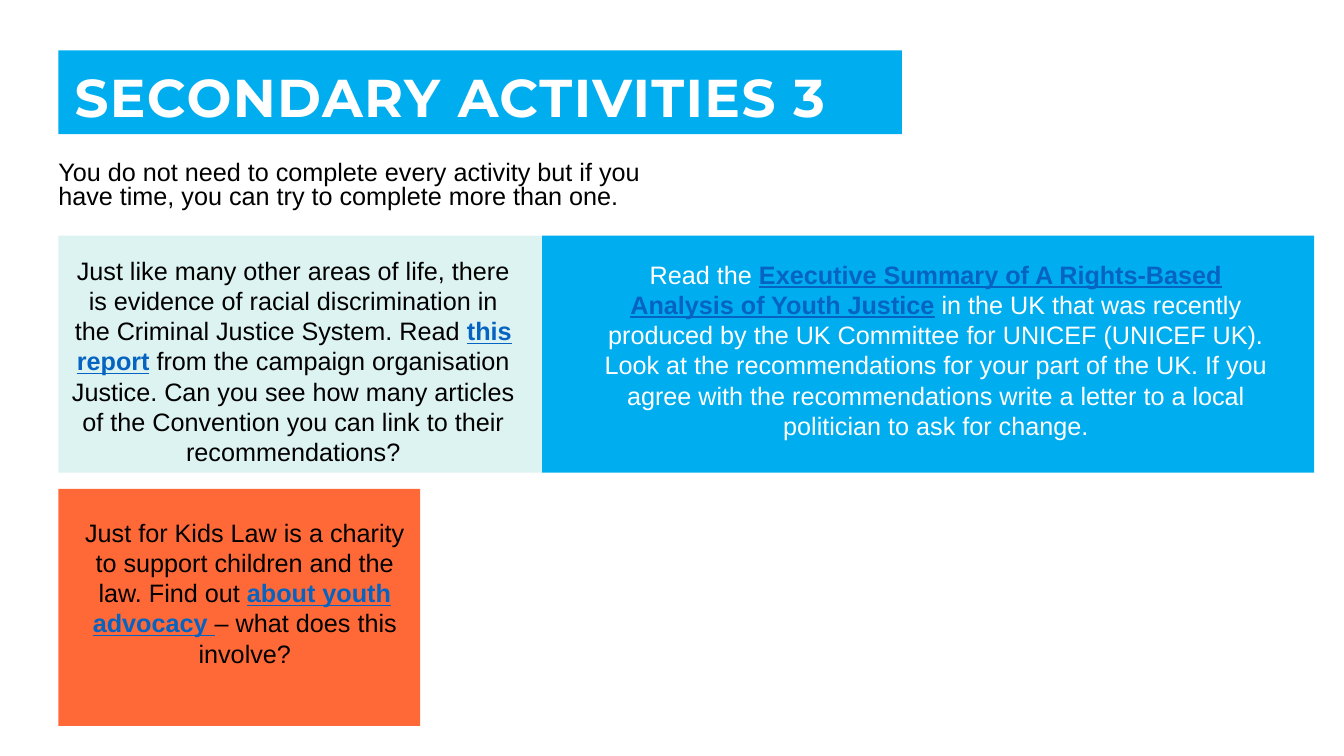
"""Build the "Secondary Activities 3" slide with three activity panels."""
from dataclasses import dataclass

from pptx import Presentation
from pptx import util as u
from pptx.dml.color import RGBColor
from pptx.enum import shapes, text

TITLE = "SECONDARY ACTIVITIES 3"
INTRO = ("You do not need to complete every activity but if you have time, "
         "you can try to complete more than one.")
ACTIVITIES = [
    {"column": 0, "row": 0, "width": 12.19, "fill": "mint", "ink": "black",
     "text_box": (0, 0.36, 11.84, 5.64),
     "words": ("Just like many other areas of life, there is evidence of racial "
               "discrimination in the Criminal Justice System. Read ",
               "this report",
               " from the campaign organisation Justice. Can you see how many "
               "articles of the Convention you can link to their recommendations?")},
    {"column": 0, "row": 1, "width": 9.12, "fill": "orange", "ink": "black",
     "text_box": (0.28, 0.58, 8.84, 4.62),
     "words": ("Just for Kids Law is a charity to support children and the law. "
               "Find out ",
               "about youth advocacy ",
               "– what does this involve?")},
    {"column": 1, "row": 0, "width": 19.46, "fill": "blue", "ink": "white",
     "text_box": (1.3, 0.46, 17.25, 4.88),
     "words": ("Read the ",
               "Executive Summary of A Rights-Based Analysis of Youth Justice",
               " in the UK that was recently produced by the UK Committee for "
               "UNICEF (UNICEF UK). Look at the recommendations for your part of "
               "the UK. If you agree with the recommendations write a letter to a "
               "local politician to ask for change.")},
]


@dataclass(frozen=True)
class Theme:
    blue: str = "00AEEF"
    mint: str = "DDF3F1"
    orange: str = "FF6937"
    link: str = "0563C1"
    black: str = "000000"
    white: str = "FFFFFF"
    title_font: str = "Montserrat"
    body_font: str = "Arial"
    title_size: int = 38
    body_size: int = 18


THEME = Theme()
LEFT, PANEL_TOP, PANEL_HEIGHT, ROW_GAP = 1.47, 5.94, 5.97, 0.41
COLUMNS = (LEFT, LEFT + ACTIVITIES[0]["width"])


def add_panel(page, left, top, width, height, fill):
    panel = page.shapes.add_shape(shapes.MSO_SHAPE.RECTANGLE,
                                  *map(u.Cm, (left, top, width, height)))
    panel.shadow.inherit = False
    panel.fill.solid()
    panel.fill.fore_color.rgb = RGBColor.from_string(fill)
    panel.line.fill.background()
    return panel


def add_text_box(page, left, top, width, height):
    box = page.shapes.add_textbox(*map(u.Cm, (left, top, width, height)))
    box.text_frame.word_wrap = True
    return box


def add_span(para, words, color, font=THEME.body_font, size=THEME.body_size,
             bold=False, underline=False):
    span = para.add_run()
    span.text = words
    span.font.name = font
    span.font.size = u.Pt(size)
    span.font.bold = bold
    span.font.underline = underline
    span.font.color.rgb = RGBColor.from_string(color)
    return span


def add_title(page):
    frame = add_panel(page, LEFT, 1.27, 21.26, 2.11, THEME.blue).text_frame
    frame.word_wrap = True
    frame.vertical_anchor = text.MSO_ANCHOR.MIDDLE
    frame.margin_left = frame.margin_top = u.Cm(0.41)
    frame.margin_right, frame.margin_bottom = u.Cm(0.3), 0
    para = frame.paragraphs[0]
    para.alignment = text.PP_ALIGN.LEFT
    para.line_spacing = 0.9
    span = add_span(para, TITLE, THEME.white, THEME.title_font,
                    THEME.title_size, bold=True)
    span.font._element.set("spc", "100")


def add_intro(page):
    frame = add_text_box(page, LEFT, 3.96, 15.77, 1.57).text_frame
    frame.margin_left = 0
    para = frame.paragraphs[0]
    para.line_spacing = 0.8
    add_span(para, INTRO, THEME.black)


def add_activity(page, activity):
    left = COLUMNS[activity["column"]]
    top = PANEL_TOP + activity["row"] * (PANEL_HEIGHT + ROW_GAP)
    add_panel(page, left, top, activity["width"], PANEL_HEIGHT,
              getattr(THEME, activity["fill"]))
    shift, drop, width, height = activity["text_box"]
    box = add_text_box(page, left + shift, top + drop, width, height)
    para = box.text_frame.paragraphs[0]
    para.alignment = text.PP_ALIGN.CENTER
    before, link, after = activity["words"]
    ink = getattr(THEME, activity["ink"])
    add_span(para, before, ink)
    add_span(para, link, THEME.link, bold=True, underline=True)
    add_span(para, after, ink)


def main():
    deck = Presentation()
    deck.slide_width, deck.slide_height = u.Cm(33.87), u.Cm(19.05)
    page = deck.slides.add_slide(deck.slide_layouts[6])
    add_title(page)
    add_intro(page)
    for activity in ACTIVITIES:
        add_activity(page, activity)
    deck.save("out.pptx")


if __name__ == "__main__":
    main()
